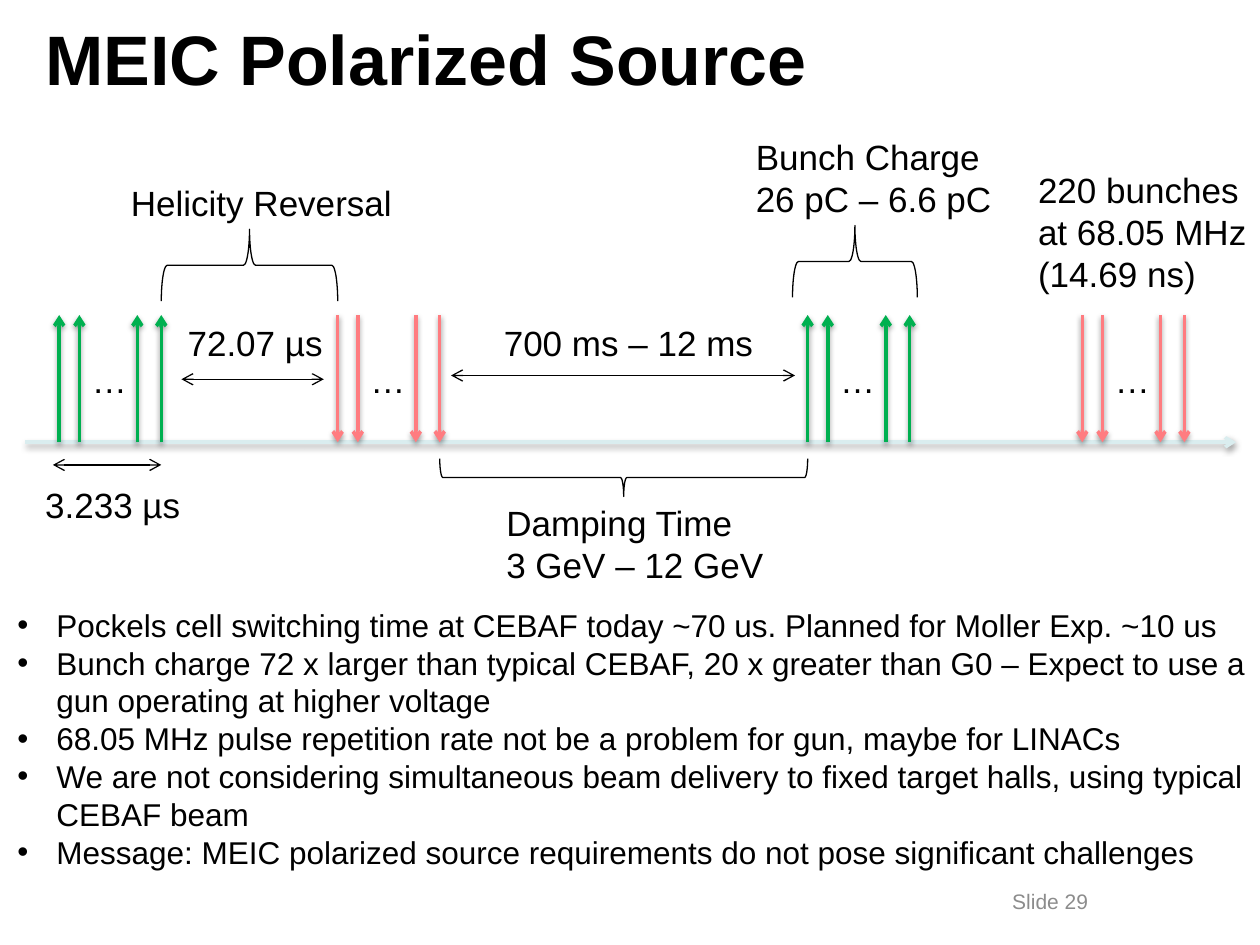
from lxml.etree import SubElement as Sub
from pptx import Presentation
from pptx.dml.color import RGBColor as RGB
from pptx.enum.shapes import MSO_CONNECTOR as Conn, MSO_SHAPE as Form
from pptx.enum.text import MSO_ANCHOR as Anchor, MSO_AUTO_SIZE as Fit, PP_ALIGN as Align
from pptx.oxml.ns import qn
from pptx.util import Inches, Pt

# Grid: 100 columns by 75 rows, each 0.1 inch
COLS, ROWS = 100, 75
CELL = Inches(0.1)
AXIS, TOP = 35.1, 25          # rows of the time axis and the bunch tops
STEPS = (0, 1.6, 6.2, 8.1)    # columns of the bunches within a train

FONT = "Arial"
BLACK = RGB(0, 0, 0)
GREY = RGB(0x8C, 0x8C, 0x8C)
GREEN = RGB(0x00, 0xB0, 0x50)
PINK = RGB(0xFF, 0x7C, 0x80)
PALE = RGB(0xDA, 0xED, 0xEF)

TRAINS = [(4.7, GREEN, True), (64.1, GREEN, True),
          (26.8, PINK, False), (85.9, PINK, False)]
SPANS = [(14.4, 25.7, 30.1), (35.8, 63.1, 29.8), (4.2, 12.8, 36.9)]
# left, right, top, bottom, tip up
BRACES = [(34.9, 64.1, 36.4, 39.4, False),
          (12.8, 26.8, 18.2, 23.9, True),
          (62.9, 72.8, 17.9, 23.6, True)]
LABELS = [(["Helicity Reversal"], 9.4, 13.9, 22.9, 4.4),
          (["72.07 µs"], 13.9, 25, 12.8, 4.4),
          (["Damping Time", "3 GeV – 12 GeV"], 39.2, 39.3, 22.6, 7.7),
          (["700 ms – 12 ms"], 39, 25, 21.9, 4.4),
          (["3.233 µs"], 2.6, 37.9, 12.8, 4.4),
          (["Bunch Charge", "26 pC – 6.6 pC"], 59, 10.3, 21.6, 7.7),
          (["220 bunches", "at 68.05 MHz", "(14.69 ns)"], 81.4, 12.9, 18.7, 11.1)]
POINTS = [
    "Pockels cell switching time at CEBAF today ~70 us. Planned for Moller Exp. ~10 us",
    "Bunch charge 72 x larger than typical CEBAF, 20 x greater than G0 – "
    "Expect to use a gun operating at higher voltage",
    "68.05 MHz pulse repetition rate not be a problem for gun, maybe for LINACs",
    "We are not considering simultaneous beam delivery to fixed target halls, "
    "using typical CEBAF beam",
    "Message: MEIC polarized source requirements do not pose significant challenges",
]


def grid(*sizes):
    return [round(size * CELL) for size in sizes]


def write(frame, lines, size=20, color=BLACK, bold=False, align=Align.LEFT,
          anchor=Anchor.TOP, wrap=False, fit=Fit.NONE, bullet=False):
    """Fill a text frame, one paragraph a line."""
    frame.word_wrap, frame.auto_size = wrap, fit
    frame.vertical_anchor = anchor
    for i, line in enumerate(lines):
        para = frame.add_paragraph() if i else frame.paragraphs[0]
        para.alignment = align
        run = para.add_run()
        run.text = line
        font = run.font
        font.name, font.size, font.bold = FONT, Pt(size), bold
        font.color.rgb = color
        if bullet:
            props = para._p.get_or_add_pPr()
            props.set("marL", str(Inches(0.31)))
            props.set("indent", str(-Inches(0.31)))
            Sub(props, qn("a:buFont")).set("typeface", FONT)
            Sub(props, qn("a:buChar")).set("char", "•")


def label(slide, lines, x, y, w, h, fit=Fit.SHAPE_TO_FIT_TEXT, **style):
    box = slide.shapes.add_textbox(*grid(x, y, w, h))
    write(box.text_frame, lines, fit=fit, **style)


def arrow(slide, x1, y1, x2, y2, color=BLACK, width=0.75, ends=("tail",), shade=False):
    """Draw a line with heads at the given ends, and a soft shadow on request."""
    line = slide.shapes.add_connector(Conn.STRAIGHT, *grid(x1, y1, x2, y2))
    line.line.color.rgb, line.line.width = color, Pt(width)
    stroke = line.line._get_or_add_ln()
    for end in ends:
        Sub(stroke, qn(f"a:{end}End")).set("type", "arrow")
    effects = Sub(line._element.spPr, qn("a:effectLst"))
    if shade:
        cast = Sub(effects, qn("a:outerShdw"), blurRad=str(Pt(3.1)),
                   dist=str(Pt(1.6)), dir="5400000", rotWithShape="0")
        tone = Sub(cast, qn("a:srgbClr"), val=str(BLACK))
        Sub(tone, qn("a:alpha"), val="38000")


def train(slide, x, color, up):
    """Draw four bunches with an ellipsis in the gap."""
    for step in STEPS:
        arrow(slide, x + step, AXIS, x + step, TOP, color, 2,
              ("tail",) if up else ("head",), shade=True)
    label(slide, ["…"], x + STEPS[1], 28, 4.8, 4.4)


def brace(slide, left, right, top, bottom, up):
    """Turn a left brace about its centre so that it lies flat."""
    span, depth = right - left, bottom - top
    x, y = (left + right - depth) / 2, (top + bottom - span) / 2
    shape = slide.shapes.add_shape(Form.LEFT_BRACE, *grid(x, y, depth, span))
    shape.rotation = 90 if up else 270
    shape.shadow.inherit = False
    shape.fill.background()
    shape.line.color.rgb, shape.line.width = BLACK, Pt(0.75)


def main():
    deck = Presentation()
    deck.slide_width, deck.slide_height = grid(COLS, ROWS)
    slide = deck.slides.add_slide(deck.slide_layouts[5])

    # Title
    title = slide.shapes.title
    title.left, title.top, title.width, title.height = grid(2.6, 0, 94.8, 9.2)
    write(title.text_frame, ["MEIC Polarized Source"], size=40, bold=True,
          anchor=Anchor.MIDDLE, wrap=True)

    # Time axis and bunch trains
    arrow(slide, 2, AXIS, 98.1, AXIS, PALE, 2, shade=True)
    for item in TRAINS:
        train(slide, *item)

    # Time spans, braces and their labels
    for left, right, y in SPANS:
        arrow(slide, left, y, right, y, ends=("head", "tail"))
    for item in BRACES:
        brace(slide, *item)
    for item in LABELS:
        label(slide, *item)

    # Slide number and notes on the source
    label(slide, ["Slide 29"], 71.7, 69.5, 23.3, 4, fit=Fit.NONE, size=12,
          color=GREY, align=Align.CENTER, anchor=Anchor.MIDDLE, wrap=True)
    label(slide, POINTS, 0.4, 47.6, 99.6, 22.6, size=18, wrap=True, bullet=True)

    deck.save("out.pptx")


if __name__ == "__main__":
    main()
